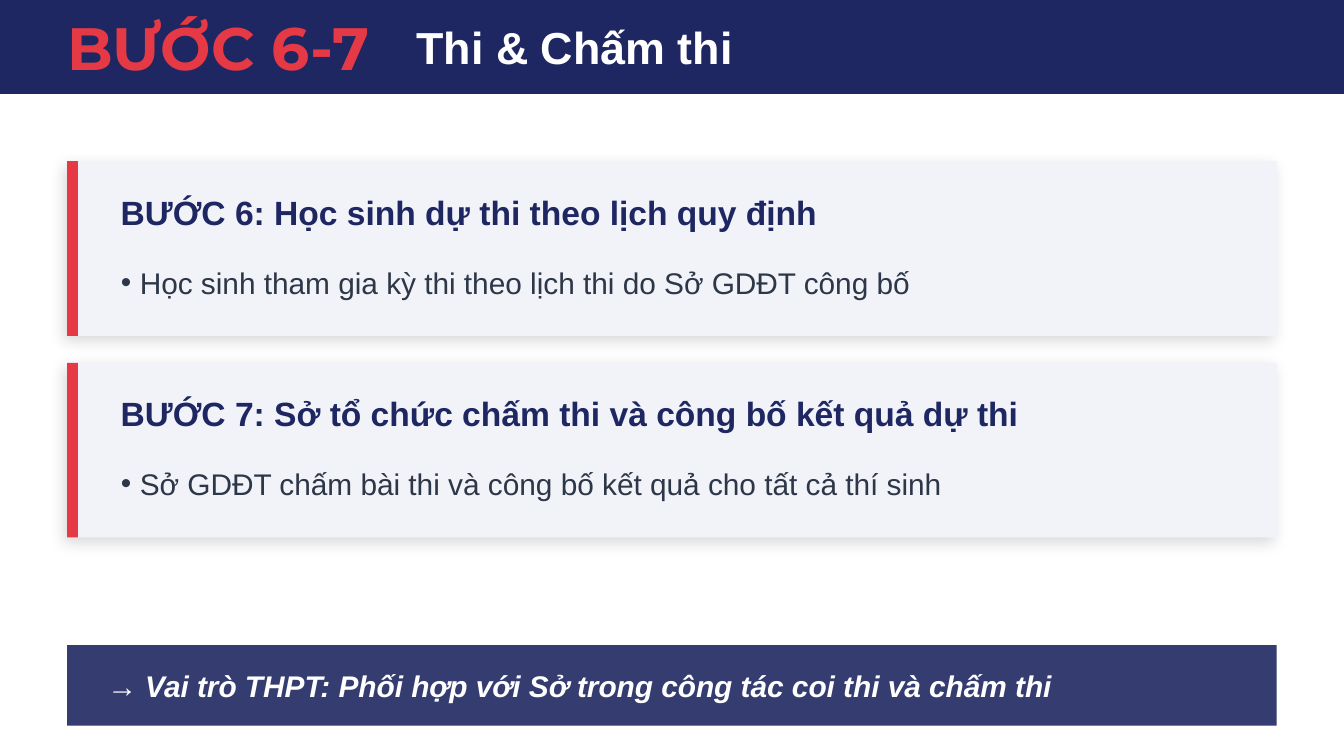
from dataclasses import dataclass
from typing import Optional

from lxml.etree import SubElement
from pptx import Presentation
from pptx.dml.color import RGBColor
from pptx.enum.shapes import MSO_SHAPE as Preset
from pptx.enum.text import MSO_ANCHOR as Anchor, MSO_AUTO_SIZE as AutoSize, PP_ALIGN as Align
from pptx.oxml.ns import qn
from pptx.util import Inches, Pt


@dataclass(frozen=True)
class Theme:
    navy: str = "1E2761"
    red: str = "E63946"
    panel: str = "F1F3F9"
    ink: str = "2D3748"
    white: str = "FFFFFF"
    body_font: str = "Arial"
    display_font: str = "Montserrat"
    label_size: int = 32
    title_size: int = 24
    heading_size: int = 18
    body_size: int = 16


@dataclass(frozen=True)
class Box:
    left: float
    top: float
    width: float
    height: float

    def lengths(self) -> tuple:
        return tuple(map(Inches, (self.left, self.top, self.width, self.height)))


@dataclass(frozen=True)
class Style:
    size: int
    color: str
    name: str = Theme.body_font
    bold: bool = False
    italic: bool = False


@dataclass(frozen=True)
class Step:
    heading: str
    detail: str


THEME = Theme()
LABEL = Style(THEME.label_size, THEME.red, THEME.display_font, bold=True)
TITLE = Style(THEME.title_size, THEME.white, bold=True)
HEADING = Style(THEME.heading_size, THEME.navy, bold=True)
DETAIL = Style(THEME.body_size, THEME.ink)
ROLE = Style(THEME.body_size, THEME.white, bold=True, italic=True)

SLIDE_WIDTH = 10
SLIDE_HEIGHT = SLIDE_WIDTH * 9 / 16
MARGIN = 0.5
CONTENT_WIDTH = SLIDE_WIDTH - 2 * MARGIN
CARD_TOP = 1.2
CARD_HEIGHT = 1.3
CARD_GAP = 0.2
BULLET_INDENT = 0.14

STEPS = [
    Step("BƯỚC 6: Học sinh dự thi theo lịch quy định",
         "Học sinh tham gia kỳ thi theo lịch thi do Sở GDĐT công bố"),
    Step("BƯỚC 7: Sở tổ chức chấm thi và công bố kết quả dự thi",
         "Sở GDĐT chấm bài thi và công bố kết quả cho tất cả thí sinh"),
]


def apply(target, values: dict) -> None:
    for key, value in values.items():
        setattr(target, key, value)


def add_panel(slide, box: Box, color: str, opacity: int = 100, shadow: bool = False) -> None:
    panel = slide.shapes.add_shape(Preset.RECTANGLE, *box.lengths())
    panel.shadow.inherit = False
    panel.fill.solid()
    panel.fill.fore_color.rgb = RGBColor.from_string(color)
    panel.line.fill.background()
    properties = panel.element.spPr
    if opacity < 100:
        tint = properties.find(f"{qn('a:solidFill')}/{qn('a:srgbClr')}")
        SubElement(tint, qn("a:alpha"), val=str(opacity * 1000))
    if shadow:
        outer = SubElement(properties.find(qn("a:effectLst")), qn("a:outerShdw"),
                           blurRad=str(Pt(8)), dist=str(Pt(3)), dir=str(135 * 60000),
                           algn="bl", rotWithShape="0")
        shade = SubElement(outer, qn("a:srgbClr"), val="000000")
        SubElement(shade, qn("a:alpha"), val="15000")


def add_text(slide, box: Box, text: str, style: Style, holder: Optional[object] = None,
             inset: bool = True, bullet: bool = False) -> None:
    left, top, width, height = box.lengths()
    if holder is None:
        holder = slide.shapes.add_textbox(left, top, width, height)
    else:
        apply(holder, dict(left=left, top=top, width=width, height=height))
        holder.element.getparent().append(holder.element)
    frame = holder.text_frame
    apply(frame, dict(word_wrap=True, auto_size=AutoSize.NONE, vertical_anchor=Anchor.MIDDLE))
    if not inset:
        apply(frame, dict.fromkeys(
            ("margin_left", "margin_top", "margin_right", "margin_bottom"), 0))
    frame.text = text
    paragraph = frame.paragraphs[0]
    apply(paragraph, dict(alignment=Align.LEFT, space_before=Pt(0)))
    if bullet:
        layout = paragraph._p.get_or_add_pPr()
        indent = Inches(BULLET_INDENT)
        layout.set("marL", str(indent))
        layout.set("indent", str(-indent))
        SubElement(layout, qn("a:buFont"), typeface=style.name)
        SubElement(layout, qn("a:buChar"), char="•")
    font = paragraph.runs[0].font
    apply(font, dict(name=style.name, size=Pt(style.size), bold=style.bold, italic=style.italic))
    font.color.rgb = RGBColor.from_string(style.color)


def add_card(slide, top: float, step: Step, holder: object) -> None:
    add_panel(slide, Box(MARGIN, top, CONTENT_WIDTH, CARD_HEIGHT), THEME.panel, shadow=True)
    add_panel(slide, Box(MARGIN, top, 0.08, CARD_HEIGHT), THEME.red)
    add_text(slide, Box(0.8, top + 0.2, 8.4, 0.35), step.heading, HEADING)
    add_text(slide, Box(0.8, top + 0.65, 8.4, 0.5), step.detail, DETAIL, holder, bullet=True)


def main() -> None:
    deck = Presentation()
    apply(deck, dict(slide_width=Inches(SLIDE_WIDTH), slide_height=Inches(SLIDE_HEIGHT)))
    slide = deck.slides.add_slide(deck.slide_layouts.get_by_name("Two Content"))
    title, *details = list(slide.placeholders)[:3]

    add_panel(slide, Box(0, 0, SLIDE_WIDTH, 0.7), THEME.navy)
    add_text(slide, Box(MARGIN, 0.1, 2.6, 0.5), "BƯỚC 6-7", LABEL, inset=False)
    add_text(slide, Box(3.1, 0.15, 6.4, 0.4), "Thi & Chấm thi", TITLE, title, inset=False)

    for index, (step, holder) in enumerate(zip(STEPS, details)):
        add_card(slide, CARD_TOP + index * (CARD_HEIGHT + CARD_GAP), step, holder)

    add_panel(slide, Box(MARGIN, 4.8, CONTENT_WIDTH, 0.6), THEME.navy, opacity=90)
    add_text(slide, Box(0.7, 4.9, 8.6, 0.4),
             "→ Vai trò THPT: Phối hợp với Sở trong công tác coi thi và chấm thi", ROLE)
    deck.save("out.pptx")


if __name__ == "__main__":
    main()
